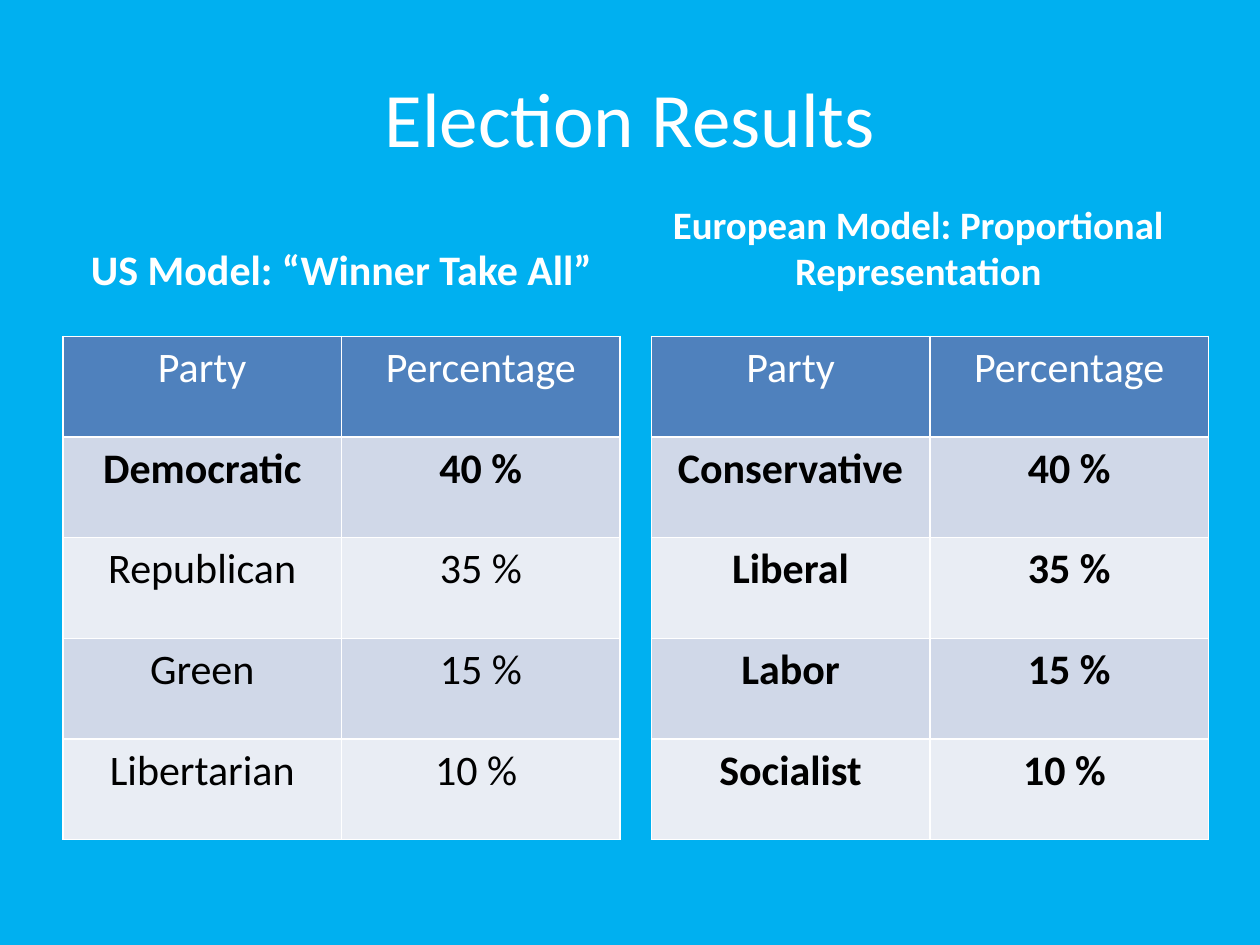
import dataclasses

import lxml.etree
import pptx
import pptx.dml.color
import pptx.enum.text
import pptx.oxml.ns
import pptx.util

Cm = pptx.util.Cm
Pt = pptx.util.Pt
Anchor = pptx.enum.text.MSO_ANCHOR


@dataclasses.dataclass(frozen=True)
class Theme:
    font: str = "Calibri"
    background: str = "00B0F0"
    light: str = "FFFFFF"
    dark: str = "000000"
    header_fill: str = "4F81BD"
    band_fills: tuple[str, str] = ("D0D8E8", "E9EDF4")
    title_size: float = 44
    text_size: float = 24
    small_heading_size: float = 22.2
    border_width: float = 1


@dataclasses.dataclass(frozen=True)
class Model:
    heading: str
    heading_size: float
    heading_index: int
    heading_left: float
    table_left: float
    parties: tuple[str, ...]
    seated: int  # number of leading parties that win seats, shown in bold


THEME = Theme()
HEADER = ("Party", "Percentage")
SHARES = ("40 %", "35 %", "15 %", "10 % ")
COLUMN_WIDTH = 11.23
TABLE_TOP = 6.78
ROW_HEIGHT = 2.03

MODELS = (
    Model("US Model: “Winner Take All”", THEME.text_size, 1, 1.27, 1.27,
          ("Democratic", "Republican", "Green", "Libertarian"), 1),
    Model("European Model: Proportional Representation", THEME.small_heading_size, 3, 12.9, 13.13,
          ("Conservative", "Liberal", "Labor", "Socialist"), 4),
)


def rgb(value: str) -> pptx.dml.color.RGBColor:
    return pptx.dml.color.RGBColor.from_string(value)


def write_text(frame, text: str, size: float, color: str, bold: bool = False) -> None:
    frame.text = text
    para = frame.paragraphs[0]
    para.alignment = pptx.enum.text.PP_ALIGN.CENTER
    font = para.runs[0].font
    font.name = THEME.font
    font.size = Pt(size)
    font.bold = bold
    font.color.rgb = rgb(color)


def fill_placeholder(box, area: tuple[float, float, float, float], text: str,
                     size: float, bold: bool, anchor: Anchor) -> None:
    box.left, box.top, box.width, box.height = map(Cm, area)
    write_text(box.text_frame, text, size, THEME.light, bold)
    box.text_frame.auto_size = pptx.enum.text.MSO_AUTO_SIZE.NONE
    box.text_frame.vertical_anchor = anchor


def add_borders(cell) -> None:
    """Put the border lines ahead of the fill, as the schema requires."""
    properties = cell._tc.get_or_add_tcPr()
    qn = pptx.oxml.ns.qn
    for position, side in enumerate("LRTB"):
        line = lxml.etree.Element(qn(f"a:ln{side}"), w=str(Pt(THEME.border_width)))
        solid = lxml.etree.SubElement(line, qn("a:solidFill"))
        lxml.etree.SubElement(solid, qn("a:srgbClr"), val=THEME.light)
        properties.insert(position, line)


def add_results_table(slide, model: Model) -> None:
    rows = (HEADER, *zip(model.parties, SHARES))
    table = slide.shapes.add_table(
        len(rows), len(HEADER), Cm(model.table_left), Cm(TABLE_TOP),
        Cm(COLUMN_WIDTH), Cm(ROW_HEIGHT * len(rows))).table
    table.horz_banding = False
    for row_index, values in enumerate(rows):
        is_header = row_index == 0
        fill = THEME.header_fill if is_header else THEME.band_fills[(row_index - 1) % 2]
        color = THEME.light if is_header else THEME.dark
        bold = 1 <= row_index <= model.seated
        for column_index, value in enumerate(values):
            cell = table.cell(row_index, column_index)
            write_text(cell.text_frame, value, THEME.text_size, color, bold)
            cell.fill.solid()
            cell.fill.fore_color.rgb = rgb(fill)
            add_borders(cell)


def main() -> None:
    deck = pptx.Presentation()
    deck.slide_width, deck.slide_height = Cm(25.4), Cm(19.05)
    slide = deck.slides.add_slide(deck.slide_layouts.get_by_name("Comparison"))
    slide.background.fill.solid()
    slide.background.fill.fore_color.rgb = rgb(THEME.background)

    fill_placeholder(slide.shapes.title, (1.27, 0.76, 22.86, 3.18), "Election Results",
                     THEME.title_size, False, Anchor.MIDDLE)
    boxes = {box.placeholder_format.idx: box for box in slide.placeholders}
    for model in MODELS:
        fill_placeholder(boxes[model.heading_index],
                         (model.heading_left, 4.27, COLUMN_WIDTH, 1.78),
                         model.heading, model.heading_size, True, Anchor.BOTTOM)
        content = boxes[model.heading_index + 1].element
        content.getparent().remove(content)
        add_results_table(slide, model)

    deck.save("out.pptx")


if __name__ == "__main__":
    main()
